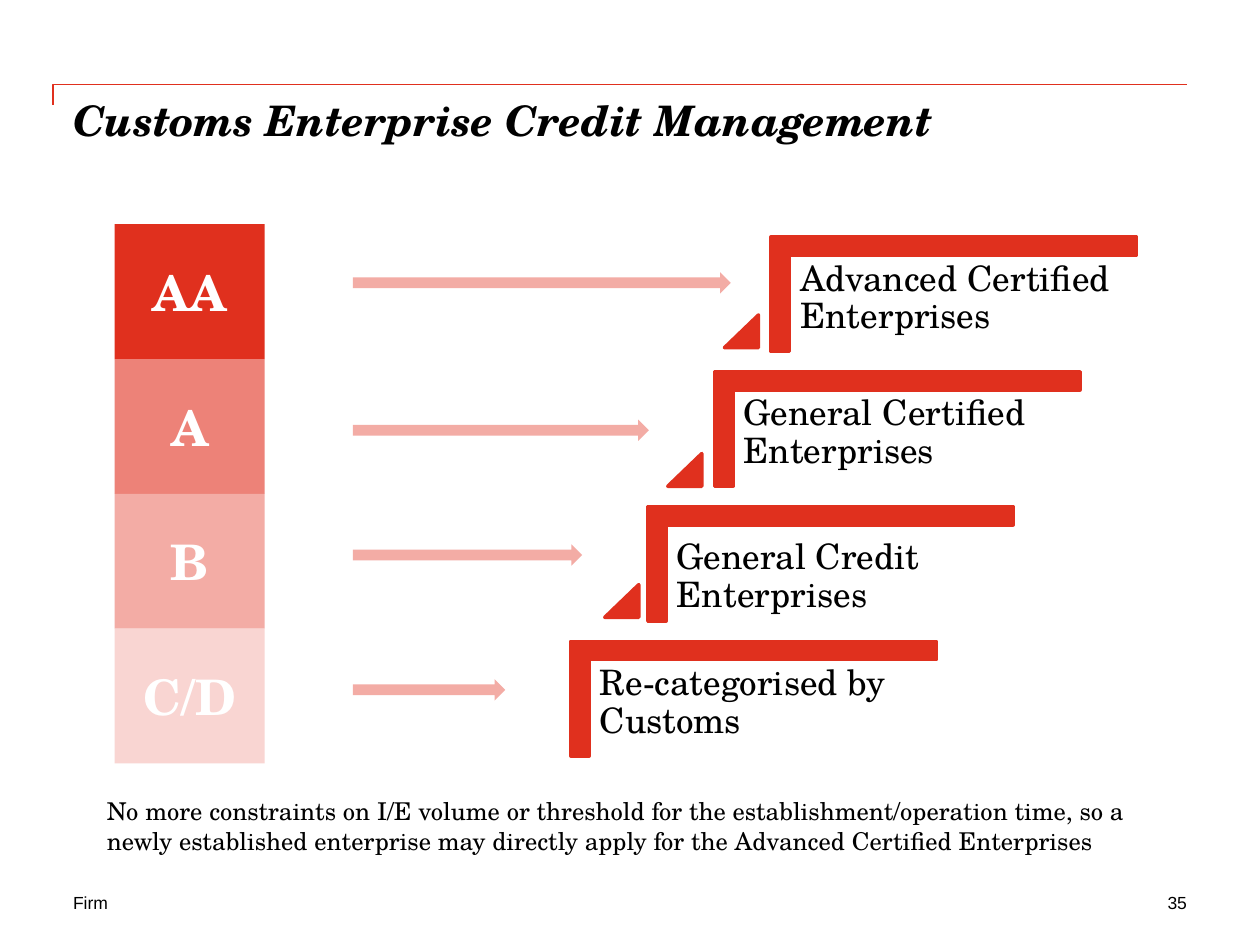
"""Build the customs enterprise credit management slide."""
from lxml.etree import SubElement
from pptx import Presentation
from pptx.dml.color import RGBColor
from pptx.enum.shapes import MSO_SHAPE
from pptx.enum.text import MSO_ANCHOR, PP_ALIGN
from pptx.oxml.ns import qn
from pptx.util import Inches, Pt

RED, PINK, BLACK, WHITE = "E0301E", "F3ACA5", "000000", "FFFFFF"
SERIF, SANS = "TeX Gyre Schola", "Arial"
TITLE = "Customs Enterprise Credit Management"
NOTE = ("No more constraints on I/E volume or threshold for the "
        "establishment/operation time, so a newly established enterprise "
        "may directly apply for the Advanced Certified Enterprises")
GRADES = [("AA", RED), ("A", "ED8278"), ("B", PINK), ("C/D", "F9D5D2")]
ARROWS = [(2.16, 3), (3.33, 2.35), (4.32, 1.82), (5.39, 1.21)]
STEPS = [
    ("Advanced Certified Enterprises", 6.12, 2),
    ("General Certified Enterprises", 5.67, 3.07),
    ("General Credit Enterprises", 5.14, 4.21),
    ("Re-categorised by Customs", 4.53, 5.21),
]
WEDGES = [(5.75, 2.5), (5.3, 3.6), (4.8, 4.64)]
PITCH, GRADE_TOP, STEP_TOP = 1.07, 1.78, 1.88
LONG, SHORT = 2.9, 0.91
HEAD = {"name": SERIF, "size": Pt(24), "bold": True, "italic": True}
MARK = {"name": SERIF, "size": Pt(28), "bold": True}
LABEL = {"name": SERIF, "size": Pt(20)}
BODY = {"name": SERIF, "size": Pt(14)}
SMALL = {"name": SANS, "size": Pt(10)}


def color(code):
    return RGBColor.from_string(code)


def write(shape, text, font, ink=BLACK, inset=(0, 0), **para):
    frame = shape.text_frame
    frame.word_wrap = True
    side, top = map(Inches, inset)
    frame.margin_left = frame.margin_right = side
    frame.margin_top = frame.margin_bottom = top
    line = frame.paragraphs[0]
    for key, value in para.items():
        setattr(line, key, value)
    run = line.add_run()
    run.text = text
    for key, value in font.items():
        setattr(run.font, key, value)
    run.font.color.rgb = color(ink)
    return frame


def add_text(slide, box, text, font, **style):
    shape = slide.shapes.add_textbox(*map(Inches, box))
    return write(shape, text, font, **style)


def add_form(slide, kind, box, fill, edge=None):
    shape = slide.shapes.add_shape(kind, *map(Inches, box))
    shape.shadow.inherit = False
    shape.fill.solid()
    shape.fill.fore_color.rgb = color(fill)
    if edge:
        shape.line.color.rgb = color(fill)
        shape.line.width = Pt(edge)
    else:
        shape.line.fill.background()
    return shape


def make_corner(shape, share):
    form = shape._element.spPr.find(qn("a:prstGeom"))
    form.set("prst", "corner")
    guides = form.find(qn("a:avLst"))
    for name in ("adj1", "adj2"):
        SubElement(guides, qn("a:gd"), name=name, fmla=f"val {round(share * 100000)}")


def add_frame(slide):
    route = slide.shapes.build_freeform(Inches(0.42), Inches(0.83))
    points = [(0.42, 0.67), (9.42, 0.67)]
    route.add_line_segments([(Inches(x), Inches(y)) for x, y in points], close=False)
    rule = route.convert_to_shape()
    rule.shadow.inherit = False
    rule.fill.background()
    rule.line.color.rgb = color(RED)
    rule.line.width = Pt(1)
    add_text(slide, (0.58, 0.75, 8.83, 1), TITLE, HEAD)
    add_text(slide, (0.58, 7.08, 2.83, 0.17), "Firm", SMALL)
    add_text(slide, (7.75, 7.08, 1.67, 0.17), "35", SMALL, alignment=PP_ALIGN.RIGHT)


def add_steps(slide):
    for row, (text, left, top) in enumerate(STEPS):
        mid_x = left + LONG / 2
        mid_y = STEP_TOP + row * PITCH + SHORT / 2
        box = (mid_x - SHORT / 2, mid_y - LONG / 2, SHORT, LONG)
        angle = add_form(slide, MSO_SHAPE.RECTANGLE, box, RED, 2)
        make_corner(angle, 0.16)
        angle.rotation = 90
        add_text(slide, (left + 0.16, top, 2.73, 0.78), text, LABEL,
                 inset=(0.07, 0.07), line_spacing=0.9)
    for left, top in WEDGES:
        wedge = add_form(slide, MSO_SHAPE.ISOSCELES_TRIANGLE,
                         (left, top, 0.27, 0.26), RED, 2)
        wedge.adjustments[0] = 1


def add_grades(slide):
    for top, width in ARROWS:
        add_form(slide, MSO_SHAPE.RIGHT_ARROW, (2.8, top, width, 0.17), PINK)
    for row, (text, fill) in enumerate(GRADES):
        box = (0.91, GRADE_TOP + row * PITCH, 1.19, PITCH)
        tile = add_form(slide, MSO_SHAPE.RECTANGLE, box, fill)
        frame = write(tile, text, MARK, WHITE, (0.1, 0.05), alignment=PP_ALIGN.CENTER)
        frame.vertical_anchor = MSO_ANCHOR.MIDDLE


def main():
    deck = Presentation()
    deck.slide_width, deck.slide_height = Inches(10), Inches(7.5)
    slide = deck.slides.add_slide(deck.slide_layouts[6])
    add_frame(slide)
    add_steps(slide)
    add_grades(slide)
    add_text(slide, (0.75, 6.27, 8.58, 0.57), NOTE, BODY, inset=(0.1, 0.05))
    deck.save("out.pptx")


if __name__ == "__main__":
    main()
